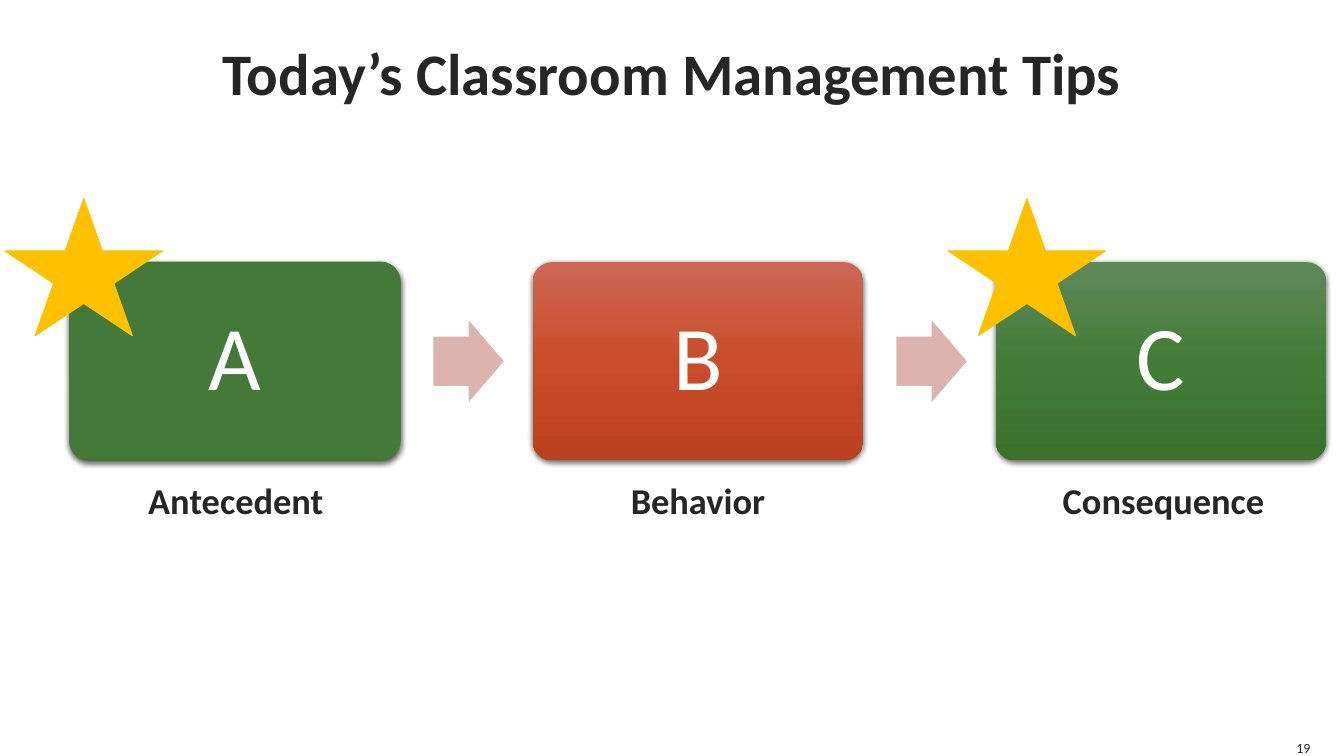
import dataclasses
from typing import Optional

import lxml.etree
import pptx
import pptx.dml.color
import pptx.enum.shapes
import pptx.enum.text
import pptx.oxml.ns
import pptx.util

SHAPES = pptx.enum.shapes.MSO_SHAPE
ALIGN = pptx.enum.text.PP_ALIGN
ANCHOR = pptx.enum.text.MSO_ANCHOR
SLIDE_WIDTH = pptx.util.Inches(13.33)
SLIDE_HEIGHT = pptx.util.Inches(7.5)


@dataclasses.dataclass(frozen=True)
class Theme:
    font: str = "Calibri"
    ink: str = "262626"
    white: str = "FFFFFF"
    arrow: str = "DDB3AE"
    star: str = "FFC000"
    green: tuple = ("447939",)
    red_gradient: tuple = ("CC6855", "C94D2A", "B9411F")
    green_gradient: tuple = ("60895A", "427C36", "39712D")
    title_size: float = 42
    letter_size: float = 65
    label_size: float = 26
    number_size: float = 10
    outline: float = 0.75


THEME = Theme()


@dataclasses.dataclass(frozen=True)
class Box:
    left: int
    top: int
    width: int
    height: int

    def place(self) -> tuple:
        return self.left, self.top, self.width, self.height


@dataclasses.dataclass(frozen=True)
class Step:
    letter: str
    label: str
    colors: tuple
    label_column: float
    label_columns: float
    star_column: Optional[float] = None


STEPS = (
    Step("A", "Antecedent", THEME.green, 2.04, 5.98, -1.95),
    Step("B", "Behavior", THEME.red_gradient, 2.32, 5.37),
    Step("C", "Consequence", THEME.green_gradient, 0.91, 8.35, -1.43),
)

# Square grid: a card is 10 columns by 6 rows, and steps repeat every 14 columns
UNIT = pptx.util.Inches(0.328)
ORIGIN_LEFT = pptx.util.Inches(0.69)
ORIGIN_TOP = pptx.util.Inches(2.6)
STEP_COLUMNS, CARD_COLUMNS, CARD_ROWS = 14, 10, 6
ARROW_COLUMN, ARROW_COLUMNS, ARROW_ROWS = 11, 2.13, 2.48


def grid_box(column: float, row: float, columns: float, rows: float) -> Box:
    return Box(int(ORIGIN_LEFT + column * UNIT), int(ORIGIN_TOP + row * UNIT),
               int(columns * UNIT), int(rows * UNIT))


def share_box(left: float, top: float, width: float, height: float) -> Box:
    return Box(int(left * SLIDE_WIDTH), int(top * SLIDE_HEIGHT),
               int(width * SLIDE_WIDTH), int(height * SLIDE_HEIGHT))


def rgb(color: str) -> pptx.dml.color.RGBColor:
    return pptx.dml.color.RGBColor.from_string(color)


def write(shape, text: str, size: float, color: str, bold: bool = False,
          align=ALIGN.CENTER, anchor=ANCHOR.MIDDLE, wrap: bool = True,
          inset: Optional[float] = None) -> None:
    frame = shape.text_frame
    frame.text = text
    frame.word_wrap = wrap
    frame.vertical_anchor = anchor
    if inset is not None:
        frame.margin_left = frame.margin_right = pptx.util.Inches(inset)
        frame.margin_top = frame.margin_bottom = pptx.util.Inches(inset)
    paragraph = frame.paragraphs[0]
    paragraph.alignment = align
    for run in paragraph.runs:
        run.font.name = THEME.font
        run.font.size = pptx.util.Pt(size)
        run.font.bold = bold
        run.font.color.rgb = rgb(color)


def fill_shape(shape, colors: tuple) -> None:
    if len(colors) == 1:
        shape.fill.solid()
        shape.fill.fore_color.rgb = rgb(colors[0])
        return
    shape.fill.gradient()
    shape.fill.gradient_angle = 270
    qn = pptx.oxml.ns.qn
    stops = shape.element.spPr.find(qn("a:gradFill")).find(qn("a:gsLst"))
    for stop in list(stops):
        stops.remove(stop)
    for index, color in enumerate(colors):
        position = 100000 * index // (len(colors) - 1)
        stop = lxml.etree.SubElement(stops, qn("a:gs"), pos=str(position))
        lxml.etree.SubElement(stop, qn("a:srgbClr"), val=color)


def add_shadow(shape) -> None:
    qn = pptx.oxml.ns.qn
    effects = shape.element.spPr.find(qn("a:effectLst"))
    shadow = lxml.etree.SubElement(
        effects, qn("a:outerShdw"), blurRad=str(pptx.util.Pt(4.5)),
        dist=str(pptx.util.Pt(1.5)), dir="5400000", algn="ctr", rotWithShape="0")
    color = lxml.etree.SubElement(shadow, qn("a:srgbClr"), val="000000")
    lxml.etree.SubElement(color, qn("a:alpha"), val="63000")


def add_figure(slide, kind, box: Box, colors: tuple, outline: Optional[str] = None,
               adjustments: tuple = ()):
    shape = slide.shapes.add_shape(kind, *box.place())
    shape.shadow.inherit = False
    for index, value in enumerate(adjustments):
        shape.adjustments[index] = value
    fill_shape(shape, colors)
    if outline:
        shape.line.color.rgb = rgb(outline)
        shape.line.width = pptx.util.Pt(THEME.outline)
    else:
        shape.line.fill.background()
    return shape


def add_step(slide, index: int, step: Step) -> None:
    column = index * STEP_COLUMNS
    # Card with its letter
    outline = step.colors[0] if len(step.colors) == 1 else None
    card = add_figure(slide, SHAPES.ROUNDED_RECTANGLE,
                      grid_box(column, 0, CARD_COLUMNS, CARD_ROWS),
                      step.colors, outline, (0.1,))
    add_shadow(card)
    write(card, step.letter, THEME.letter_size, THEME.white, inset=0.27)
    card.text_frame.paragraphs[0].line_spacing = 0.9
    # Arrow to the next card
    if index < len(STEPS) - 1:
        arrow_row = (CARD_ROWS - ARROW_ROWS) / 2
        add_figure(slide, SHAPES.RIGHT_ARROW,
                   grid_box(column + ARROW_COLUMN, arrow_row, ARROW_COLUMNS, ARROW_ROWS),
                   (THEME.arrow,), adjustments=(0.6, 0.5))
    # Label below the card
    label_box = grid_box(column + step.label_column, 6.37, step.label_columns, 1.65)
    label = slide.shapes.add_textbox(*label_box.place())
    write(label, step.label, THEME.label_size, THEME.ink, bold=True, anchor=ANCHOR.TOP)
    # Star on the card's corner
    if step.star_column is not None:
        add_figure(slide, SHAPES.STAR_5_POINT,
                   grid_box(column + step.star_column, -1.92, 4.76, 4.15),
                   (THEME.star,), THEME.star)


def main() -> None:
    presentation = pptx.Presentation()
    presentation.slide_width = SLIDE_WIDTH
    presentation.slide_height = SLIDE_HEIGHT
    slide = presentation.slides.add_slide(presentation.slide_layouts[6])

    # Title
    title = slide.shapes.add_textbox(*share_box(0, 0, 1, 0.19).place())
    write(title, "Today’s Classroom Management Tips", THEME.title_size, THEME.ink,
          bold=True, inset=0)

    # Steps
    for index, step in enumerate(STEPS):
        add_step(slide, index, step)

    # Slide number
    number = slide.shapes.add_textbox(*share_box(0.9625, 0.9775, 0.0125, 0.0225).place())
    write(number, "19", THEME.number_size, THEME.ink, align=ALIGN.RIGHT,
          anchor=ANCHOR.BOTTOM, wrap=False, inset=0)

    presentation.save("out.pptx")


if __name__ == "__main__":
    main()
